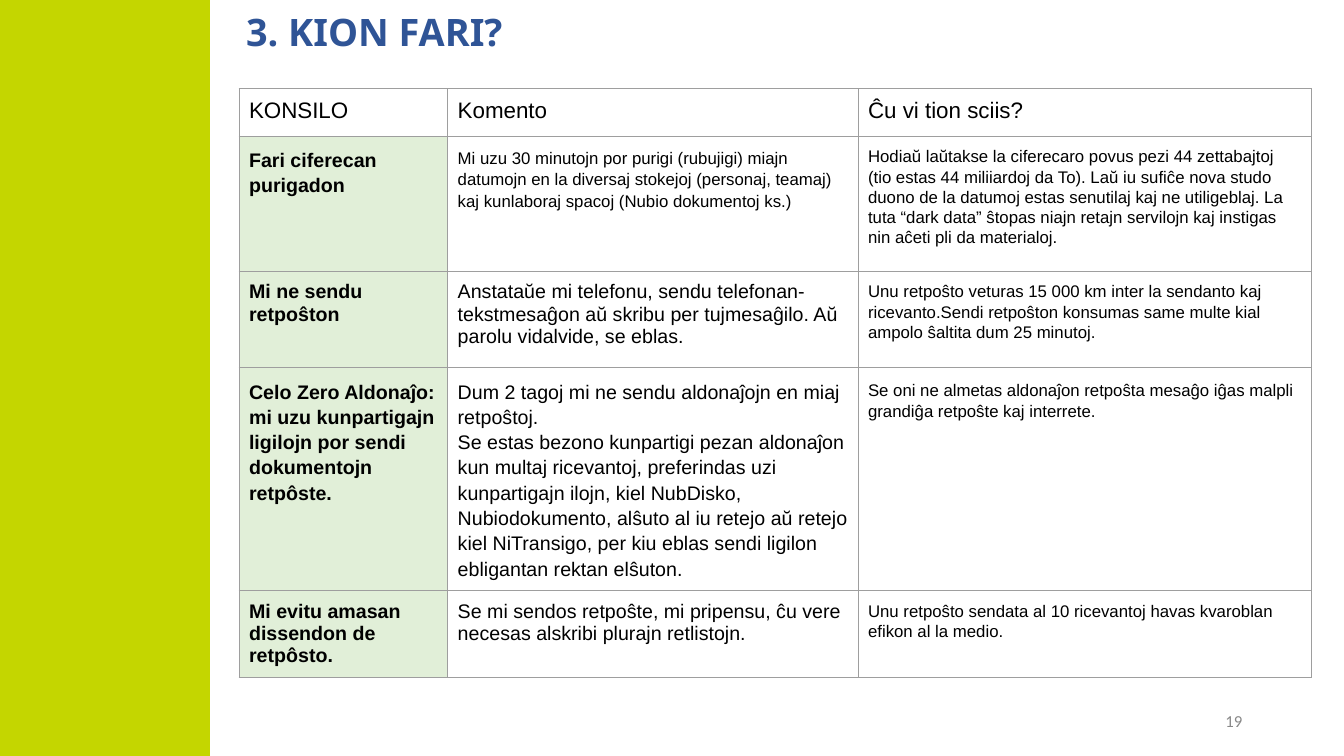
from dataclasses import dataclass

from lxml.etree import SubElement
from pptx import Presentation
from pptx.dml.color import RGBColor
from pptx.enum.shapes import MSO_SHAPE
from pptx.enum.text import MSO_ANCHOR, MSO_AUTO_SIZE, PP_ALIGN
from pptx.oxml.ns import qn
from pptx.util import Inches, Pt

COLORS = {
    "lime": "C4D600",
    "title": "2F5496",
    "number": "888888",
    "text": "000000",
    "advice": "E1EFD8",
    "border": "9E9E9E",
}
COLUMN_WIDTHS = [2.07, 4.07, 4.5]
ROW_HEIGHTS = [0.47, 1.34, 0.96, 2.21, 0.86]
CELL_MARGIN = 0.1
BORDER_POINTS = 0.75


@dataclass(frozen=True)
class CellText:
    text: str
    size: float = 14
    line_spacing: float = 1.0
    space_after: float = 0
    bold: bool = False


ROWS = [
    [
        CellText("KONSILO", 16),
        CellText("Komento", 16),
        CellText("Ĉu vi tion sciis?", 16),
    ],
    [
        CellText("Fari ciferecan purigadon", line_spacing=1.15, bold=True),
        CellText(
            "Mi uzu 30 minutojn por purigi (rubujigi) miajn datumojn en la diversaj "
            "stokejoj (personaj, teamaj) kaj kunlaboraj spacoj (Nubio dokumentoj ks.)",
            12, 1.15,
        ),
        CellText(
            "Hodiaŭ laŭtakse la ciferecaro povus pezi 44 zettabajtoj (tio estas 44 "
            "miliiardoj da To). Laŭ iu sufiĉe nova studo duono de la datumoj estas "
            "senutilaj kaj ne utiligeblaj. La tuta “dark data” ŝtopas niajn retajn "
            "servilojn kaj instigas nin aĉeti pli da materialoj.",
            12, 1.08,
        ),
    ],
    [
        CellText("Mi ne sendu retpoŝton", bold=True),
        CellText(
            "Anstataŭe mi telefonu, sendu telefonan- tekstmesaĝon aŭ skribu per "
            "tujmesaĝilo. Aŭ parolu vidalvide, se eblas."
        ),
        CellText(
            "Unu retpoŝto veturas 15 000 km inter la sendanto kaj ricevanto.Sendi "
            "retpoŝton konsumas same multe kial ampolo ŝaltita dum 25 minutoj.",
            12, 1.08, 12,
        ),
    ],
    [
        CellText(
            "Celo Zero Aldonaĵo: mi uzu kunpartigajn ligilojn por sendi dokumentojn "
            "retpôste.",
            line_spacing=1.15, bold=True,
        ),
        CellText(
            "Dum 2 tagoj mi ne sendu aldonaĵojn en miaj retpoŝtoj.\n"
            "Se estas bezono kunpartigi pezan aldonaĵon kun multaj ricevantoj, "
            "preferindas uzi kunpartigajn ilojn, kiel NubDisko, Nubiodokumento, "
            "alŝuto al iu retejo aŭ retejo kiel NiTransigo, per kiu eblas sendi "
            "ligilon ebligantan rektan elŝuton.",
            line_spacing=1.15,
        ),
        CellText(
            "Se oni ne almetas aldonaĵon retpoŝta mesaĝo iĝas malpli grandiĝa "
            "retpoŝte kaj interrete.",
            12, 1.15,
        ),
    ],
    [
        CellText("Mi evitu amasan dissendon de retpôsto.", bold=True),
        CellText(
            "Se mi sendos retpoŝte, mi pripensu, ĉu vere necesas alskribi plurajn "
            "retlistojn."
        ),
        CellText(
            "Unu retpoŝto sendata al 10 ricevantoj havas kvaroblan efikon al la medio.",
            12, 1.08, 12,
        ),
    ],
]


def color(name: str) -> RGBColor:
    return RGBColor.from_string(COLORS[name])


def format_runs(paragraph, font_name: str, size: float, color_name: str, bold: bool = False) -> None:
    for run in paragraph.runs:
        run.font.name = font_name
        run.font.size = Pt(size)
        run.font.bold = bold
        run.font.color.rgb = color(color_name)


def add_side_band(slide) -> None:
    band = slide.shapes.add_shape(MSO_SHAPE.RECTANGLE, 0, 0, Inches(2.08), Inches(7.5))
    band.shadow.inherit = False
    band.fill.solid()
    band.fill.fore_color.rgb = color("lime")
    band.line.color.rgb = color("lime")
    band.line.width = Pt(1)


def set_title(slide) -> None:
    title = slide.shapes.title
    title.left, title.top = Inches(2.05), Inches(0)
    title.width, title.height = Inches(11.28), Inches(0.68)
    frame = title.text_frame
    frame.text = "3. KION FARI?"
    frame.auto_size = MSO_AUTO_SIZE.NONE
    frame.vertical_anchor = MSO_ANCHOR.MIDDLE
    frame.margin_left, frame.margin_right = Inches(0.39), Inches(0.59)
    paragraph = frame.paragraphs[0]
    paragraph.alignment = PP_ALIGN.LEFT
    paragraph.line_spacing = 0.9
    format_runs(paragraph, "Noto Sans", 27, "title", True)


def add_slide_number(slide) -> None:
    box = slide.shapes.add_textbox(Inches(9.42), Inches(6.95), Inches(3), Inches(0.4))
    frame = box.text_frame
    frame.word_wrap = True
    frame.vertical_anchor = MSO_ANCHOR.MIDDLE
    frame.text = "19"
    paragraph = frame.paragraphs[0]
    paragraph.alignment = PP_ALIGN.RIGHT
    format_runs(paragraph, "Calibri", 12, "number")


def set_borders(cell) -> None:
    properties = cell._tc.get_or_add_tcPr()
    for side in ("lnL", "lnR", "lnT", "lnB"):
        line = SubElement(properties, qn(f"a:{side}"), w=str(Pt(BORDER_POINTS)))
        fill = SubElement(line, qn("a:solidFill"))
        SubElement(fill, qn("a:srgbClr"), val=COLORS["border"])


def fill_cell(cell, content: CellText) -> None:
    cell.margin_left = cell.margin_right = Inches(CELL_MARGIN)
    cell.margin_top = cell.margin_bottom = Inches(CELL_MARGIN)
    set_borders(cell)
    if content.bold:
        cell.fill.solid()
        cell.fill.fore_color.rgb = color("advice")
    else:
        cell.fill.background()
    cell.text_frame.text = content.text
    for paragraph in cell.text_frame.paragraphs:
        paragraph.line_spacing = content.line_spacing
        paragraph.space_after = Pt(content.space_after)
        format_runs(paragraph, "Arial", content.size, "text", content.bold)


def add_advice_table(slide) -> None:
    table = slide.shapes.add_table(
        len(ROWS), len(COLUMN_WIDTHS), Inches(2.37), Inches(0.88),
        Inches(sum(COLUMN_WIDTHS)), Inches(sum(ROW_HEIGHTS)),
    ).table
    table.first_row = False
    table.horz_banding = False
    for column, width in zip(table.columns, COLUMN_WIDTHS):
        column.width = Inches(width)
    for row, height, contents in zip(table.rows, ROW_HEIGHTS, ROWS):
        row.height = Inches(height)
        for cell, content in zip(row.cells, contents):
            fill_cell(cell, content)


def main() -> None:
    presentation = Presentation()
    presentation.slide_width = Inches(13.33)
    presentation.slide_height = Inches(7.5)
    slide = presentation.slides.add_slide(presentation.slide_layouts[5])
    add_side_band(slide)
    set_title(slide)
    add_advice_table(slide)
    add_slide_number(slide)
    presentation.save("out.pptx")


if __name__ == "__main__":
    main()
